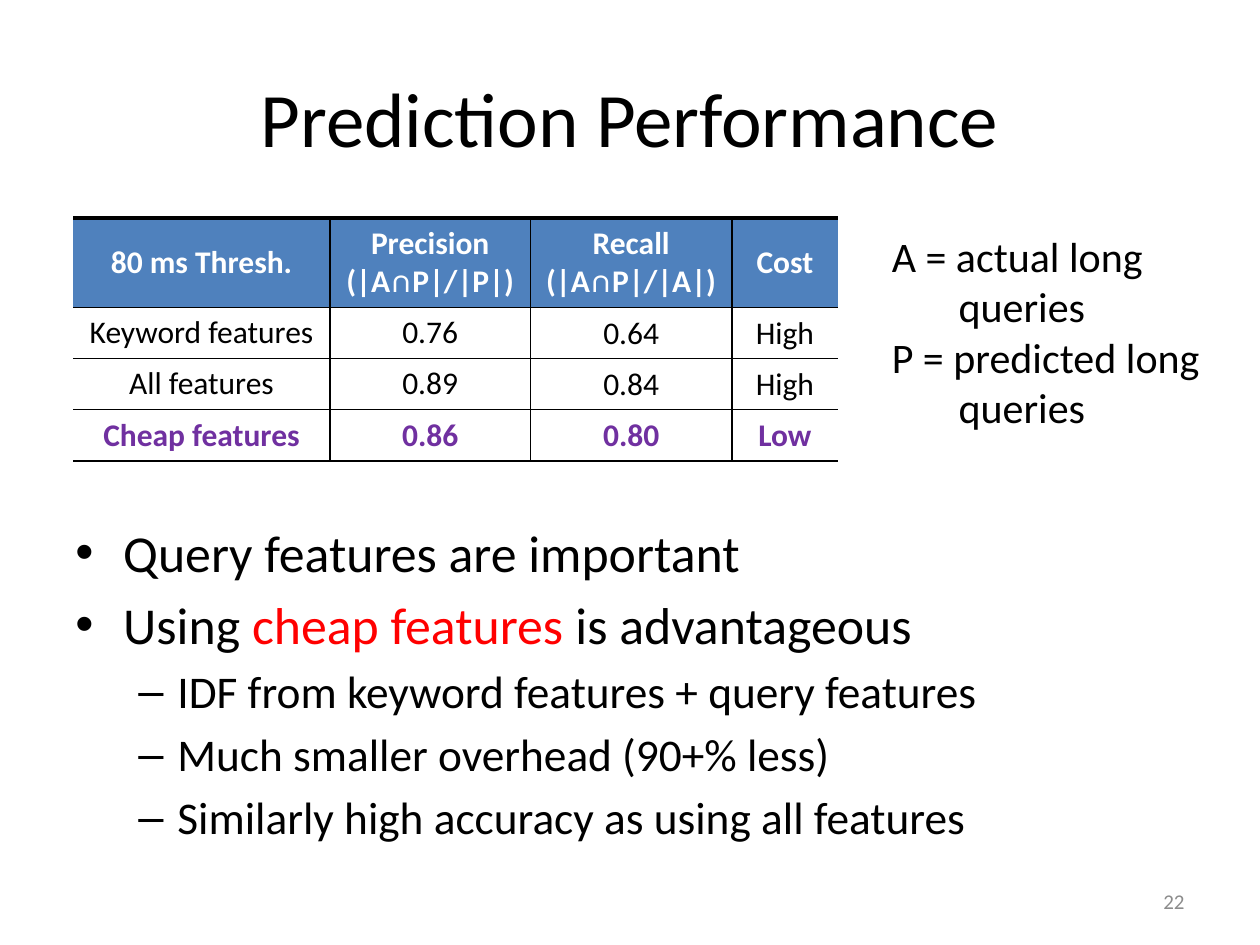
from pptx import Presentation
from pptx import util as u
from pptx.dml.color import RGBColor
from pptx.enum import text
from pptx.oxml import parse_xml
from pptx.oxml.ns import nsdecls

FONT = "Calibri"
BLACK, WHITE, BLUE, PURPLE, RED, GRAY = (
    "000000", "FFFFFF", "4F81BD", "7030A0", "FF0000", "8C8C8C")
CENTER, RIGHT = text.PP_ALIGN.CENTER, text.PP_ALIGN.RIGHT
MIDDLE = text.MSO_ANCHOR.MIDDLE


def color(hex_string):
    return RGBColor.from_string(hex_string)


def format_font(font, size, hex_string=BLACK, bold=False):
    font.name, font.size, font.bold = FONT, u.Pt(size), bold
    font.color.rgb = color(hex_string)


def format_text(text_frame, size, hex_string=BLACK, bold=False, align=None):
    for paragraph in text_frame.paragraphs:
        paragraph.alignment = align
        for run in paragraph.runs:
            format_font(run.font, size, hex_string, bold)


def place(shape, box):
    shape.left, shape.top, shape.width, shape.height = map(u.Inches, box)


def add_text_box(slide, box):
    text_frame = slide.shapes.add_textbox(*map(u.Inches, box)).text_frame
    text_frame.word_wrap = True
    return text_frame


def set_borders(cell, widths):
    """Draw each side in points; a width of 0 leaves the side open."""
    properties = cell._tc.get_or_add_tcPr()
    for position, (side, width) in enumerate(zip(("L", "R", "T", "B"), widths)):
        fill = (f'<a:solidFill><a:srgbClr val="{BLACK}"/></a:solidFill>'
                if width else "<a:noFill/>")
        properties.insert(position, parse_xml(
            f'<a:ln{side} {nsdecls("a")} w="{u.Pt(width)}">{fill}</a:ln{side}>'))


def set_indent(paragraph, left, first=0.0, bullet=None):
    properties = paragraph._p.get_or_add_pPr()
    properties.set("marL", str(u.Inches(left)))
    properties.set("indent", str(u.Inches(first)))
    if bullet:
        properties.append(parse_xml(
            f'<a:buFont {nsdecls("a")} typeface="Arial"/>'))
        properties.append(parse_xml(
            f'<a:buChar {nsdecls("a")} char="{bullet}"/>'))


def add_title(slide, box):
    title = slide.shapes.title
    place(title, box)
    title.text_frame.text = "Prediction Performance"
    title.text_frame.vertical_anchor = MIDDLE
    format_text(title.text_frame, 44, align=CENTER)


def add_results_table(slide, box):
    rows = [
        ("80 ms Thresh.", "Precision\n(|A∩P|/|P|)", "Recall\n(|A∩P|/|A|)", "Cost"),
        ("Keyword features", "0.76", "0.64", "High"),
        ("All features", "0.89", "0.84", "High"),
        ("Cheap features", "0.86", "0.80", "Low"),
    ]
    last_row, last_column = len(rows) - 1, len(rows[0]) - 1
    table = slide.shapes.add_table(
        len(rows), len(rows[0]), *map(u.Inches, box)).table
    table.horz_banding = False
    for column, width in zip(table.columns, (2.04, 1.59, 1.6, 0.84)):
        column.width = u.Inches(width)

    for r, values in enumerate(rows):
        header = r == 0
        table.rows[r].height = u.Inches(0.71 if header else 0.4)
        hex_string = WHITE if header else PURPLE if r == last_row else BLACK
        for c, value in enumerate(values):
            cell = table.cell(r, c)
            cell.text_frame.text = value
            cell.vertical_anchor = MIDDLE
            format_text(cell.text_frame, 18, hex_string,
                        header or r == last_row, CENTER)
            if header:
                cell.fill.solid()
                cell.fill.fore_color.rgb = color(BLUE)
            else:
                cell.fill.background()
                if c >= 2:
                    cell.margin_left = cell.margin_right = u.Inches(0.01)
                    cell.margin_top, cell.margin_bottom = u.Inches(0.01), 0
            set_borders(cell, (int(c > 0), int(c < last_column),
                               2 if header else 1, 1))


def add_legend(slide, box):
    text_frame = add_text_box(slide, box)
    text_frame.text = "A = actual long\nqueries\nP = predicted long\nqueries"
    format_text(text_frame, 24)
    for paragraph in text_frame.paragraphs[1::2]:
        set_indent(paragraph, 0.53)


def add_findings(slide, box):
    # Each finding: level, then its runs of text and colour
    findings = [
        (0, [("Query features are important", BLACK)]),
        (0, [("Using ", BLACK), ("cheap features ", RED),
             ("is advantageous", BLACK)]),
        (1, [("IDF from keyword features + query features", BLACK)]),
        (1, [("Much smaller overhead (90+% less)", BLACK)]),
        (1, [("Similarly high accuracy as using all features", BLACK)]),
    ]
    # Each level: size, space before, left margin, first-line indent, bullet
    levels = [(29.6, 5.6, 0.38, -0.38, "•"), (25.9, 5, 0.81, -0.31, "–")]
    text_frame = add_text_box(slide, box)
    for i, (level, parts) in enumerate(findings):
        size, space, left, first, bullet = levels[level]
        paragraph = (text_frame.add_paragraph() if i
                     else text_frame.paragraphs[0])
        paragraph.level = level
        paragraph.space_before = u.Pt(space)
        set_indent(paragraph, left, first, bullet)
        for words, hex_string in parts:
            run = paragraph.add_run()
            run.text = words
            format_font(run.font, size, hex_string)


def add_page_number(slide, box):
    text_frame = add_text_box(slide, box)
    text_frame.text = "22"
    text_frame.vertical_anchor = MIDDLE
    format_text(text_frame, 12, GRAY, align=RIGHT)


def main():
    presentation = Presentation()
    presentation.slide_width = u.Inches(10)
    presentation.slide_height = u.Inches(7.5)
    slide = presentation.slides.add_slide(presentation.slide_layouts[5])
    add_title(slide, (0.5, 0.3, 9, 1.25))
    add_results_table(slide, (0.58, 1.73, 6.07, 1.91))
    add_legend(slide, (6.98, 1.78, 2.93, 1.72))
    add_findings(slide, (0.5, 4.08, 9, 2.62))
    add_page_number(slide, (7.17, 6.95, 2.33, 0.4))
    presentation.save("out.pptx")


if __name__ == "__main__":
    main()
